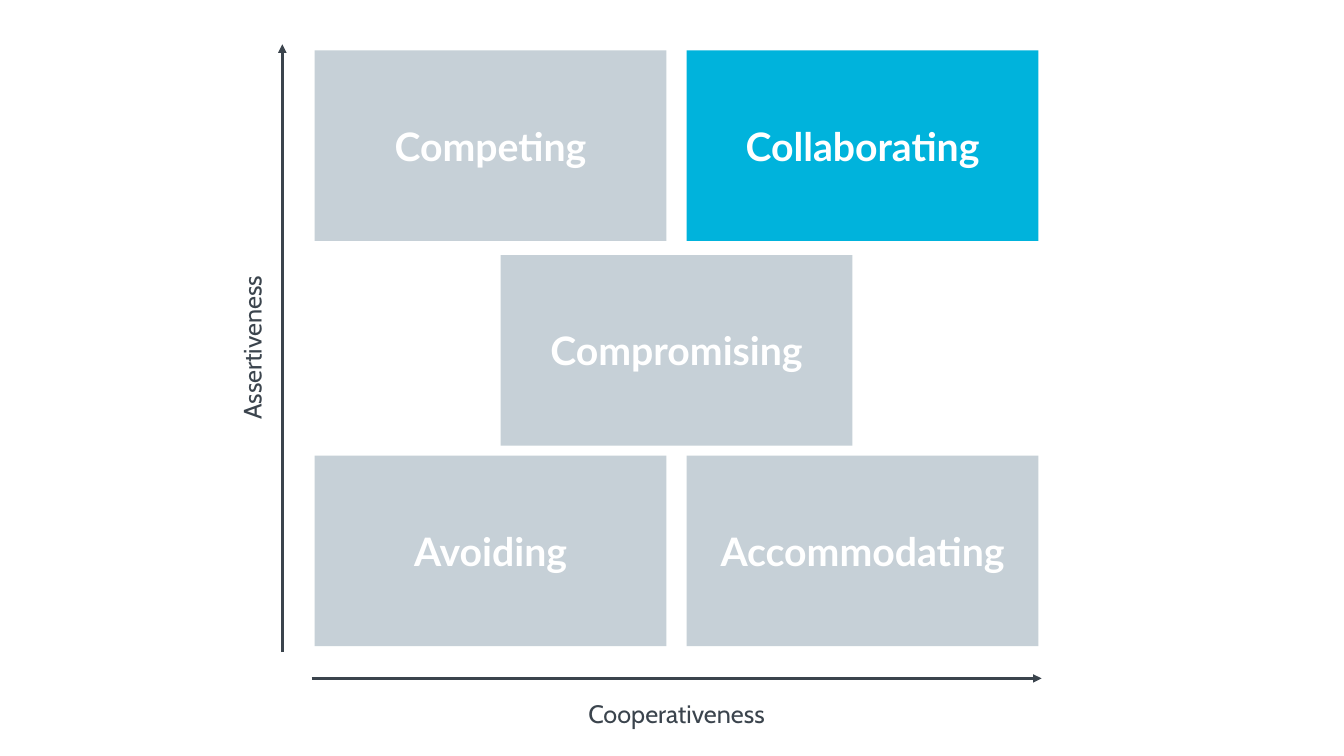
from lxml import etree
from pptx import Presentation
from pptx.dml.color import RGBColor
from pptx.enum.shapes import MSO_CONNECTOR, MSO_SHAPE
from pptx.enum.text import MSO_ANCHOR, MSO_AUTO_SIZE, PP_ALIGN
from pptx.oxml.ns import qn
from pptx.util import Inches, Pt

RECT = MSO_SHAPE.RECTANGLE
LINE = MSO_CONNECTOR.STRAIGHT
MIDDLE = MSO_ANCHOR.MIDDLE
TOP = MSO_ANCHOR.TOP
GROW = MSO_AUTO_SIZE.SHAPE_TO_FIT_TEXT
CENTER = PP_ALIGN.CENTER

COLORS = {"grey": "C6D0D7", "blue": "00B3DC", "dark": "3B444D", "white": "FFFFFF"}
BOX_W, BOX_H = 3.49, 1.89
LEFT, STEP = 3.12, 3.69
ROWS = (0.5, 2.53, 4.52)
MODES = (
    ("Competing", 0, 0, "grey"),
    ("Collaborating", 1, 0, "blue"),
    ("Compromising", 0.5, 1, "grey"),
    ("Avoiding", 0, 2, "grey"),
    ("Accommodating", 1, 2, "grey"),
)


def color(name):
    """Return the named colour."""
    return RGBColor.from_string(COLORS[name])


def write(shape, text, font="Cabin", size=18, ink="dark", bold=False, anchor=TOP):
    """Put one centred, formatted line of text in a shape."""
    frame = shape.text_frame
    frame.word_wrap = True
    frame.vertical_anchor = anchor
    para = frame.paragraphs[0]
    para.alignment = CENTER
    run = para.add_run()
    run.text = text
    run.font.name = font
    run.font.size = Pt(size)
    run.font.bold = bold
    run.font.color.rgb = color(ink)


def add_mode(slide, text, col, row, fill):
    """Draw one conflict mode on the grid."""
    box = slide.shapes.add_shape(
        RECT, Inches(LEFT + col * STEP), Inches(ROWS[row]), Inches(BOX_W), Inches(BOX_H))
    box.shadow.inherit = False
    box.fill.solid()
    box.fill.fore_color.rgb = color(fill)
    box.line.fill.background()
    write(box, text, font="Lato", size=28, ink="white", bold=True, anchor=MIDDLE)


def add_axis(slide, *ends):
    """Draw an axis arrow from start x, y to end x, y."""
    axis = slide.shapes.add_connector(LINE, *map(Inches, ends))
    axis.line.color.rgb = color("dark")
    axis.line.width = Pt(2)
    etree.SubElement(axis.line._get_or_add_ln(), qn("a:tailEnd"), type="triangle")
    etree.SubElement(axis._element.spPr, qn("a:effectLst"))


def add_label(slide, text, left, top, width, turn=0):
    """Draw an axis label."""
    label = slide.shapes.add_textbox(
        Inches(left), Inches(top), Inches(width), Inches(0.4))
    label.rotation = turn
    write(label, text)
    label.text_frame.auto_size = GROW


def main():
    """Build and save the slide."""
    deck = Presentation()
    deck.slide_width, deck.slide_height = Inches(13.33), Inches(7.5)
    slide = deck.slides.add_slide(deck.slide_layouts[6])
    for mode in MODES:
        add_mode(slide, *mode)
    add_axis(slide, 2.8, 6.47, 2.8, 0.44)
    add_label(slide, "Assertiveness", -0.24, 3.25, 5.47, turn=270)
    add_axis(slide, 3.09, 6.73, 10.33, 6.73)
    add_label(slide, "Cooperativeness", 3.09, 6.88, 7.24)
    deck.save("out.pptx")


if __name__ == "__main__":
    main()
